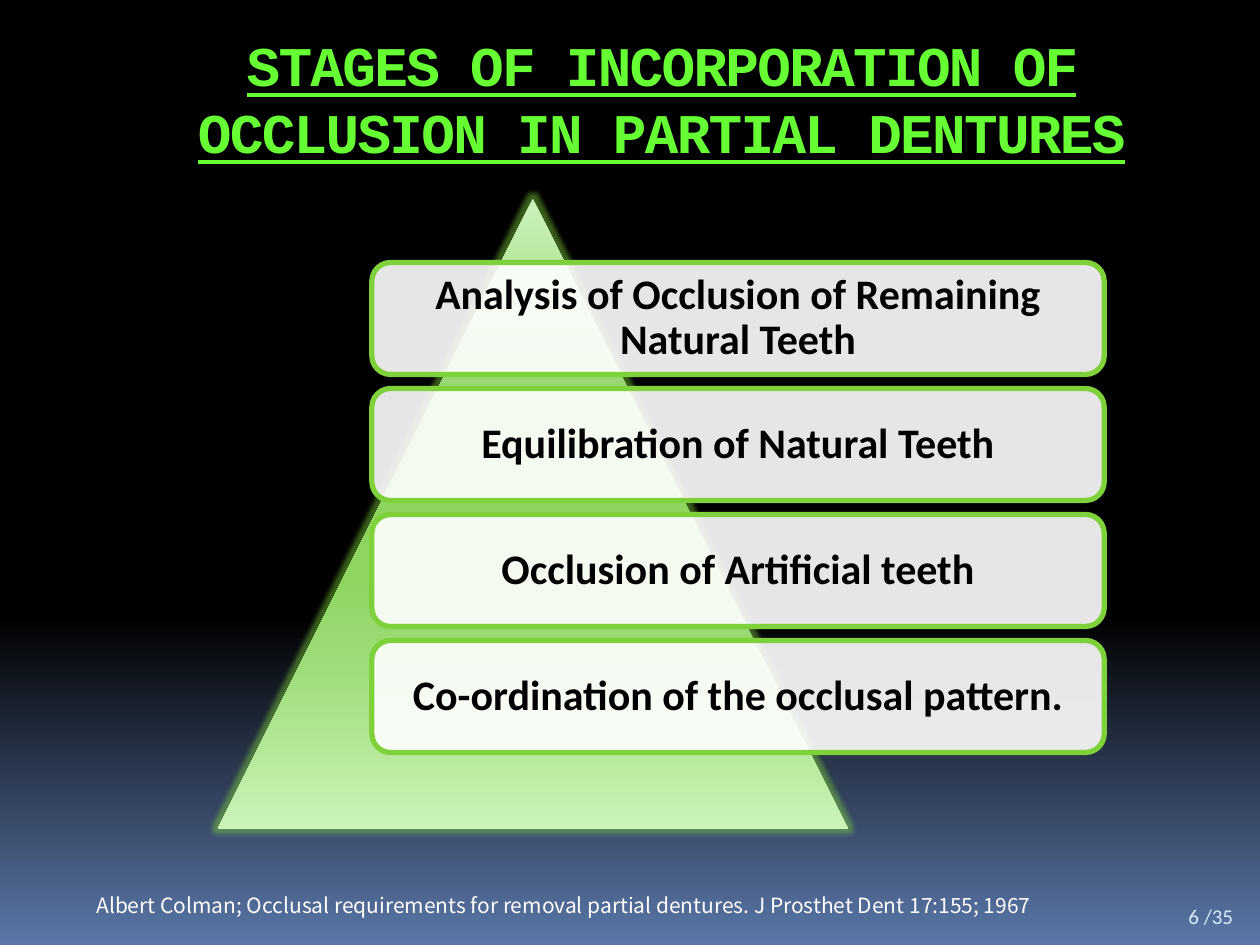
import pptx
import pptx.util
import pptx.dml.color
import pptx.enum.shapes
import pptx.enum.text
import pptx.oxml.ns
from lxml import etree

Pt = pptx.util.Pt
qn = pptx.oxml.ns.qn
Shape = pptx.enum.shapes.MSO_SHAPE
Align = pptx.enum.text.PP_ALIGN
Anchor = pptx.enum.text.MSO_ANCHOR


def color(code):
    return pptx.dml.color.RGBColor.from_string(code)


def write(shape, text, hue, frame, para, font):
    """Put one formatted paragraph into a shape."""
    body = shape.text_frame
    body.text = text
    line = body.paragraphs[0]
    run = line.runs[0]
    run.font.color.rgb = color(hue)
    for part, form in ((body, frame), (line, para), (run.font, font)):
        for name, value in form.items():
            setattr(part, name, value)
    return line


deck = pptx.Presentation()
deck.slide_width, deck.slide_height = Pt(720), Pt(540)
slide = deck.slides.add_slide(deck.slide_layouts[5])
shapes = slide.shapes

# Triangle, its stacking order set before the boxes
peak = shapes.add_shape(Shape.ISOSCELES_TRIANGLE, Pt(124.5), Pt(113.5), Pt(360), Pt(360))
peak.shadow.inherit = False
peak.line.fill.background()

# Gradients of the background and the triangle
night = [(0, "000000"), (65, "000000"), (100, "5B77A8")]
green = [(0, "CCF2BB"), (25, "9CD979"), (40, "8FD562"), (50, "8DD55F"),
         (60, "8FD562"), (75, "9EDD7B"), (100, "CBF4B9")]
for fill, root, stops in ((slide.background.fill, slide.background._cSld.bg, night),
                          (peak.fill, peak._element.spPr, green)):
    fill.gradient()
    fill.gradient_angle = 270
    tones = root.find(".//" + qn("a:gsLst"))
    for old in list(tones):
        tones.remove(old)
    for place, code in stops:
        stop = etree.SubElement(tones, qn("a:gs"), pos=str(place * 1000))
        etree.SubElement(stop, qn("a:srgbClr"), val=code)

# Soft glow round the triangle
effect = peak._element.spPr.find(qn("a:effectLst"))
glow = etree.SubElement(effect, qn("a:glow"), rad=str(Pt(5)))
tint = etree.SubElement(glow, qn("a:srgbClr"), val="7FD13B")
etree.SubElement(tint, qn("a:alpha"), val="45000")

# Title
title = shapes.title
title.left, title.top, title.width, title.height = Pt(72), Pt(12), Pt(612), Pt(72)
line = write(title, "STAGES OF INCORPORATION OF OCCLUSION IN PARTIAL DENTURES", "66FF33",
             {"vertical_anchor": Anchor.TOP, "margin_top": Pt(6), "word_wrap": True,
              "auto_size": pptx.enum.text.MSO_AUTO_SIZE.NONE},
             {"alignment": Align.CENTER, "line_spacing": Pt(38)},
             {"name": "Courier New", "size": Pt(32), "bold": True, "underline": True})
line.runs[0].font._element.set("spc", "-100")

# Stage boxes
stages = ["Analysis of Occlusion of Remaining Natural Teeth",
          "Equilibration of Natural Teeth",
          "Occlusion of Artificial teeth",
          "Co-ordination of the occlusal pattern."]
inset = {"margin_" + side: Pt(7.2) for side in ("left", "top", "right", "bottom")}
for row, stage in enumerate(stages):
    box = shapes.add_shape(Shape.ROUNDED_RECTANGLE,
                           Pt(212.5), Pt(150 + 72 * row), Pt(418.5), Pt(64))
    box.shadow.inherit = False
    box.fill.solid()
    box.fill.fore_color.rgb = color("FFFFFF")
    solid = box._element.spPr.find(qn("a:solidFill"))
    etree.SubElement(solid[0], qn("a:alpha"), val="90000")
    box.line.color.rgb = color("7FD13B")
    box.line.width = Pt(3)
    write(box, stage, "000000",
          {"vertical_anchor": Anchor.MIDDLE, "word_wrap": True, **inset},
          {"alignment": Align.CENTER, "line_spacing": 0.9},
          {"name": "Calibri", "size": Pt(24), "bold": True})

# Source line
source = shapes.add_textbox(Pt(48), Pt(492), Pt(684), Pt(31))
line = write(source, "Albert Colman; Occlusal requirements for removal partial dentures. "
             "J Prosthet Dent 17:155; 1967", "FFFFFF",
             {"word_wrap": True},
             {"alignment": Align.JUSTIFY, "line_spacing": 2.0},
             {"name": "Noto Sans CJK KR", "size": Pt(12)})
props = line._p.get_or_add_pPr()
props.set("marL", str(Pt(40)))
props.set("indent", str(-Pt(40)))

# Page count
count = shapes.add_textbox(Pt(672), Pt(505.5), Pt(48), Pt(29))
write(count, "6 /35", "D6ECFF",
      {"vertical_anchor": Anchor.BOTTOM, "word_wrap": True}, {},
      {"name": "Calibri", "size": Pt(12)})

deck.save("out.pptx")
